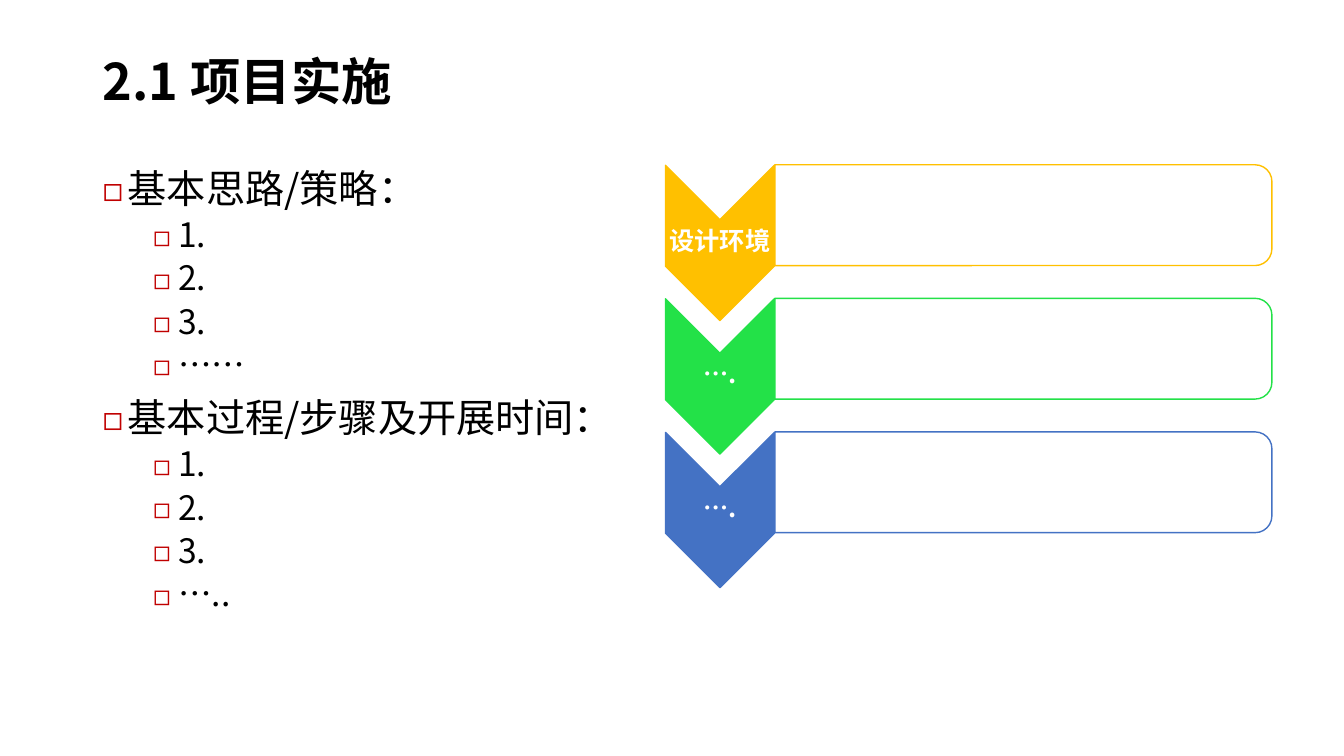
from lxml import etree
from pptx import Presentation
from pptx.dml.color import RGBColor
from pptx.enum.shapes import MSO_SHAPE
from pptx.enum.text import MSO_ANCHOR, MSO_AUTO_SIZE, PP_ALIGN
from pptx.oxml.ns import qn
from pptx.util import Inches, Pt

CHEVRON = MSO_SHAPE.CHEVRON
PANEL = MSO_SHAPE.ROUND_2_SAME_RECTANGLE
MIDDLE = MSO_ANCHOR.MIDDLE
LEFT, CENTER = PP_ALIGN.LEFT, PP_ALIGN.CENTER
SHRINK = MSO_AUTO_SIZE.TEXT_TO_FIT_SHAPE

FONT = "Noto Sans CJK SC"
COLORS = {"text": "000000", "white": "FFFFFF", "bullet": "C00000",
          "amber": "FFC000", "green": "23E148", "blue": "4472C4"}
OUTLINE = [("基本思路/策略：", ["1.", "2.", "3.", "……"]),
           ("基本过程/步骤及开展时间：", ["1.", "2.", "3.", "….."])]
STEPS = [("设计环境", "amber"), ("….", "green"), ("….", "blue")]
STEP_PITCH = 1.325


class SlideBuilder:
    """Holds the slide and its text style, and adds each kind of element."""

    def __init__(self, prs):
        self.slide = prs.slides.add_slide(prs.slide_layouts[5])

    def format(self, p, size, color="text", bold=False, align=LEFT):
        p.alignment = align
        p.line_spacing = 0.9
        for r in p.runs:
            r.font.size = Pt(size)
            r.font.bold = bold
            r.font.name = FONT
            r.font.color.rgb = RGBColor.from_string(COLORS[color])
            ea = etree.SubElement(r.font._element, qn("a:ea"))
            ea.set("typeface", FONT)

    def bullet(self, p, margin):
        pPr = p._p.get_or_add_pPr()
        pPr.set("marL", str(Inches(margin)))
        pPr.set("indent", str(Inches(-0.25)))
        clr = etree.SubElement(pPr, qn("a:buClr"))
        etree.SubElement(clr, qn("a:srgbClr")).set("val", COLORS["bullet"])
        etree.SubElement(pPr, qn("a:buSzPct")).set("val", "85000")
        etree.SubElement(pPr, qn("a:buFont")).set("typeface", FONT)
        etree.SubElement(pPr, qn("a:buChar")).set("char", "◻")

    def title(self, text, x, y, w, h):
        sp = self.slide.shapes.title
        sp.left, sp.top, sp.width, sp.height = map(Inches, (x, y, w, h))
        tf = sp.text_frame
        tf.text = text
        tf.vertical_anchor = MIDDLE
        self.format(tf.paragraphs[0], 36, bold=True)

    def textbox(self, x, y, w, h):
        tf = self.slide.shapes.add_textbox(*map(Inches, (x, y, w, h))).text_frame
        tf.word_wrap = True
        return tf

    def outline(self, sections, x, y, w, h):
        tf = self.textbox(x, y, w, h)
        tf.auto_size = SHRINK
        lines = [line for head, items in sections
                 for line in [(head, 0)] + [(item, 1) for item in items]]
        for i, (text, level) in enumerate(lines):
            p = tf.add_paragraph() if i else tf.paragraphs[0]
            p.text = text
            p.level = level
            p.space_before = Pt(5 if level else 10)
            self.format(p, 24 if level else 28)
            self.bullet(p, 0.75 if level else 0.25)

    def label(self, text, x, y, w, h):
        tf = self.textbox(x, y, w, h)
        tf.margin_left = tf.margin_right = Inches(0.01)
        tf.margin_top = tf.margin_bottom = Inches(0.01)
        tf.vertical_anchor = MIDDLE
        tf.text = text
        p = tf.paragraphs[0]
        p.space_after = Pt(6.3)
        self.format(p, 18, "white", True, CENTER)

    def turned_shape(self, kind, x, y, w, h, fill, line):
        sp = self.slide.shapes.add_shape(kind, *map(Inches, (x, y, w, h)))
        sp.rotation = 90
        sp.shadow.inherit = False
        sp.fill.solid()
        sp.fill.fore_color.rgb = RGBColor.from_string(COLORS[fill])
        sp.line.color.rgb = RGBColor.from_string(COLORS[line])
        sp.line.width = Pt(1)
        return sp

    def step(self, text, color, dy):
        self.turned_shape(CHEVRON, 6.37, 1.87 + dy, 1.54, 1.08, color, color)
        self.label(text, 6.6, 2.17 + dy, 1.08, 0.46)
        sp = self.turned_shape(PANEL, 9.65, -0.33 + dy, 1, 4.93, "white", color)
        clr = sp._element.spPr.find(qn("a:solidFill")).find(qn("a:srgbClr"))
        etree.SubElement(clr, qn("a:alpha")).set("val", "90000")


def main():
    prs = Presentation()
    prs.slide_width, prs.slide_height = Inches(13.33), Inches(7.5)
    s = SlideBuilder(prs)
    s.title("2.1 项目实施", 0.92, 0.22, 11.5, 1.23)
    s.outline(OUTLINE, 0.92, 1.63, 11.5, 5.12)
    for i, (text, color) in enumerate(STEPS):
        s.step(text, color, i * STEP_PITCH)
    prs.save("out.pptx")


if __name__ == "__main__":
    main()
